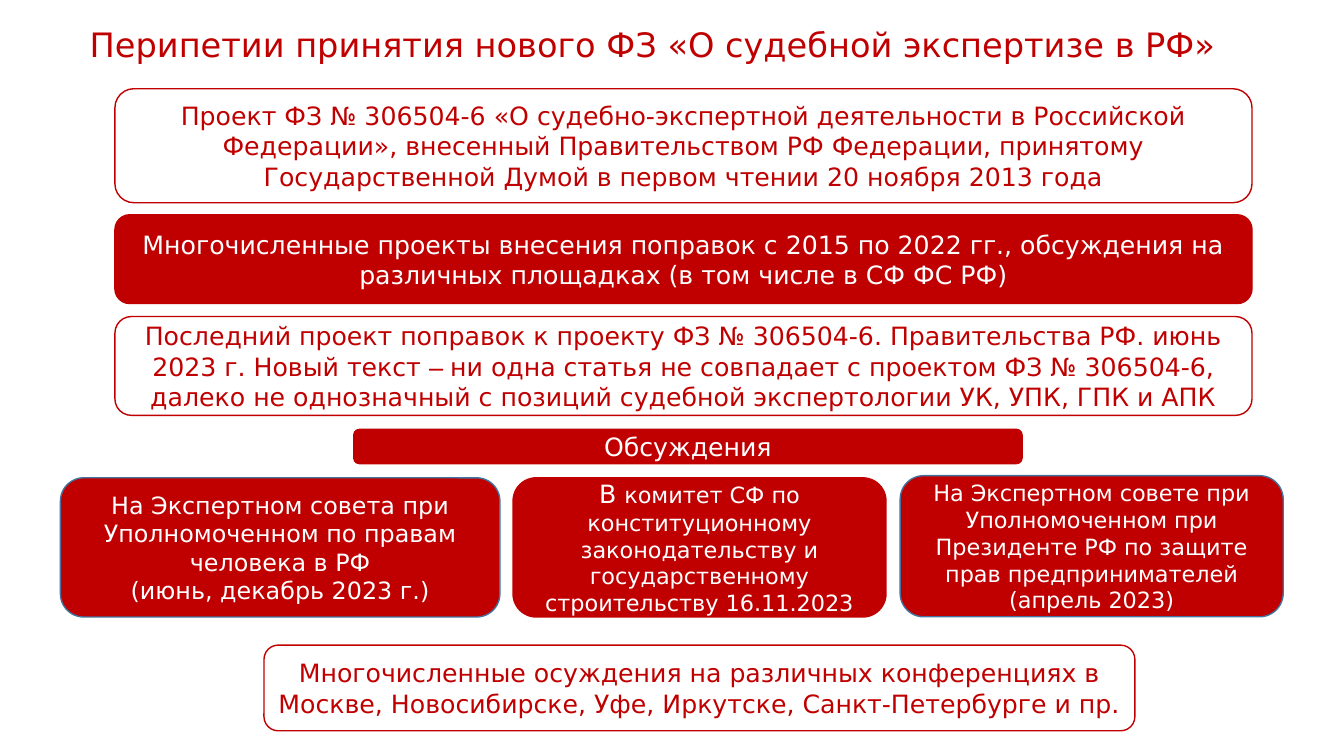
from dataclasses import dataclass

from pptx import Presentation
from pptx.dml.color import RGBColor
from pptx.enum.shapes import MSO_SHAPE
from pptx.enum.text import MSO_ANCHOR, PP_ALIGN
from pptx.util import Pt

RED = RGBColor(0xC0, 0x00, 0x00)
WHITE = RGBColor(0xFF, 0xFF, 0xFF)
BLUE = RGBColor(0x43, 0x73, 0x9E)
FONT = "DejaVu Sans"
DASH_FONT = "TeX Gyre Adventor"


@dataclass(frozen=True)
class Span:
    text: str
    size: float = 18
    font: str = FONT


@dataclass(frozen=True)
class Box:
    left: float
    top: float
    width: float
    height: float
    paragraphs: list[list[Span]]
    fill: RGBColor = RED
    line: RGBColor = RED
    color: RGBColor = WHITE


LAW_LEFT, LAW_WIDTH = 82.1, 812.2
OUTLINED = {"fill": WHITE, "color": RED}

TITLE = Box(29.5, 4.5, 873.4, 54, [
    [Span("Перипетии принятия нового ФЗ «О судебной экспертизе в РФ»", 24)],
], color=RED)

BOXES = [
    Box(LAW_LEFT, 63.4, LAW_WIDTH, 81.4, [[Span(
        "Проект ФЗ № 306504-6 «О судебно-экспертной деятельности в Российской "
        "Федерации», внесенный Правительством РФ Федерации, принятому "
        "Государственной Думой в первом чтении 20 ноября 2013 года")]], **OUTLINED),
    Box(LAW_LEFT, 153.4, LAW_WIDTH, 63.4, [[Span(
        "Многочисленные проекты внесения поправок с 2015 по 2022 гг., обсуждения "
        "на различных площадках (в том числе в СФ ФС РФ)")]]),
    Box(LAW_LEFT, 226.1, LAW_WIDTH, 70.6, [[
        Span("Последний проект поправок к проекту ФЗ № 306504-6. Правительства РФ. "
             "июнь 2023 г. Новый текст "),
        Span("─ ", font=DASH_FONT),
        Span("ни одна статья не совпадает с проектом ФЗ № 306504-6, далеко не "
             "однозначный с позиций судебной экспертологии УК, УПК, ГПК и АПК"),
    ]], **OUTLINED),
    Box(252.7, 306.7, 477.4, 24.5, [[Span("Обсуждения")]]),
    Box(43.2, 341.3, 313.9, 99.4, [
        [Span("На Экспертном совета при Уполномоченном по правам человека в РФ", 17)],
        [Span("(июнь, декабрь 2023 г.)", 17)],
    ], line=BLUE),
    Box(366.5, 341.3, 266.4, 99.4, [[
        Span("В "),
        Span("комитет СФ по конституционному законодательству и государственному "
             "строительству 16.11.2023", 16),
    ]]),
    Box(643, 339.8, 273.6, 100.8, [[Span(
        "На Экспертном совете при Уполномоченном при Президенте РФ по защите прав "
        "предпринимателей (апрель 2023)", 16)]], line=BLUE),
    Box(188.6, 460.8, 622.1, 61.2, [[Span(
        "Многочисленные осуждения на различных конференциях в Москве, "
        "Новосибирске, Уфе, Иркутске, Санкт-Петербурге и пр.")]], **OUTLINED),
]


def frame(box: Box) -> tuple[Pt, ...]:
    return tuple(Pt(v) for v in (box.left, box.top, box.width, box.height))


def write_text(sp, box: Box) -> None:
    tf = sp.text_frame
    for name, value in {"word_wrap": True, "vertical_anchor": MSO_ANCHOR.MIDDLE}.items():
        setattr(tf, name, value)
    for i, spans in enumerate(box.paragraphs):
        p = tf.add_paragraph() if i else tf.paragraphs[0]
        p.alignment = PP_ALIGN.CENTER
        for span in spans:
            r = p.add_run()
            r.text = span.text
            for name, value in {"name": span.font, "size": Pt(span.size)}.items():
                setattr(r.font, name, value)
            r.font.color.rgb = box.color


def draw_box(s, box: Box) -> None:
    sp = s.shapes.add_shape(MSO_SHAPE.ROUNDED_RECTANGLE, *frame(box))
    sp.shadow.inherit = False
    sp.fill.solid()
    sp.fill.fore_color.rgb = box.fill
    sp.line.color.rgb = box.line
    sp.line.width = Pt(1)
    write_text(sp, box)


def main() -> None:
    prs = Presentation()
    prs.slide_width, prs.slide_height = Pt(960), Pt(540)
    s = prs.slides.add_slide(prs.slide_layouts[6])
    write_text(s.shapes.add_textbox(*frame(TITLE)), TITLE)
    for box in BOXES:
        draw_box(s, box)
    prs.save("out.pptx")


if __name__ == "__main__":
    main()
